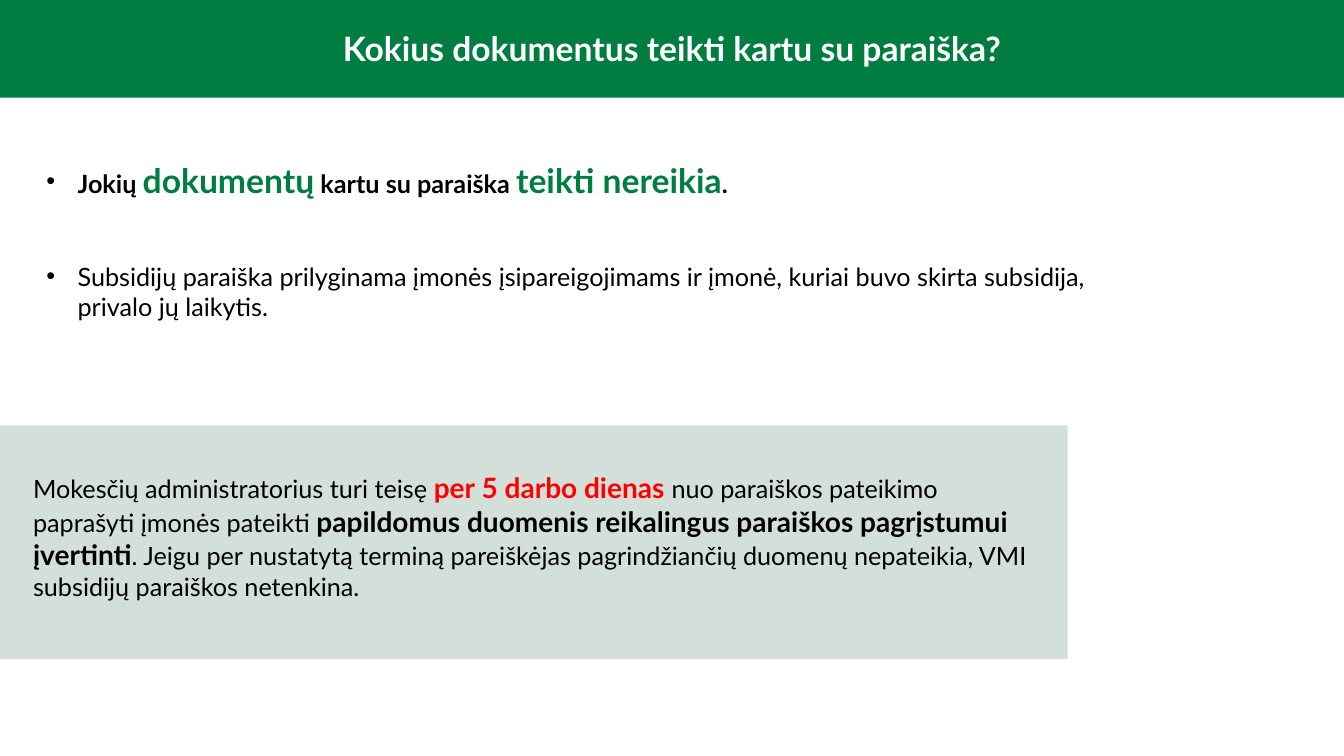
from dataclasses import dataclass

from pptx import Presentation
from pptx.dml.color import RGBColor as RGB
from pptx.enum.shapes import MSO_SHAPE as Shape
from pptx.enum.text import MSO_ANCHOR as Anchor, MSO_AUTO_SIZE as Fit, PP_ALIGN as Align
from pptx.util import Inches, Pt


@dataclass(frozen=True)
class Theme:
    font: str = "Lato"
    band: RGB = RGB(0x01, 0x7D, 0x41)
    panel: RGB = RGB(0xD3, 0xE0, 0xD9)
    green: RGB = RGB(0x00, 0x7D, 0x40)
    red: RGB = RGB(0xFF, 0x00, 0x00)
    black: RGB = RGB(0x00, 0x00, 0x00)
    white: RGB = RGB(0xFF, 0xFF, 0xFF)
    text: int = 18
    strong: int = 20
    large: int = 24


THEME = Theme()


@dataclass(frozen=True)
class Box:
    left: float
    top: float
    width: float
    height: float

    def size(self) -> tuple:
        return tuple(Inches(n) for n in (self.left, self.top, self.width, self.height))


@dataclass(frozen=True)
class Span:
    text: str
    size: int = THEME.text
    color: RGB = THEME.black
    bold: bool = False


def add_rect(slide, box: Box, color: RGB):
    rect = slide.shapes.add_shape(Shape.RECTANGLE, *box.size())
    rect.shadow.inherit = False
    rect.fill.solid()
    rect.fill.fore_color.rgb = color
    rect.line.fill.background()
    return rect


def place(shape, box: Box, anchor: Anchor = Anchor.TOP):
    shape.left, shape.top, shape.width, shape.height = box.size()
    frame = shape.text_frame
    frame.word_wrap = True
    frame.auto_size = Fit.NONE
    frame.vertical_anchor = anchor
    return frame


def write(para, spans: list[Span], align: Align = Align.LEFT, gap: float = 0) -> None:
    para.alignment = align
    para.space_before = Pt(gap)
    para.font.name = THEME.font
    for span in spans:
        run = para.add_run()
        run.text = span.text
        run.font.size = Pt(span.size)
        run.font.bold = span.bold
        run.font.color.rgb = span.color


def indent(para, depth: float) -> None:
    props = para._p.get_or_add_pPr()
    props.set("marL", str(Inches(depth)))
    props.set("indent", str(-Inches(depth)))


TITLE = Span("Kokius dokumentus teikti kartu su paraiška?", THEME.large, THEME.white, True)
POINTS = [
    [
        Span("Jokių ", bold=True),
        Span("dokumentų", THEME.large, THEME.green, True),
        Span(" kartu su paraiška ", bold=True),
        Span("teikti nereikia", THEME.large, THEME.green, True),
        Span(".", bold=True),
    ],
    [Span("Subsidijų paraiška prilyginama įmonės įsipareigojimams ir įmonė, "
          "kuriai buvo skirta subsidija, privalo jų laikytis.")],
]
NOTE = [
    Span("Mokesčių administratorius turi teisę "),
    Span("per", THEME.strong, THEME.red, True),
    Span(" "),
    Span("5 darbo dienas ", THEME.strong, THEME.red, True),
    Span("nuo paraiškos pateikimo paprašyti įmonės pateikti "),
    Span("papildomus duomenis reikalingus paraiškos pagrįstumui įvertinti",
         THEME.strong, bold=True),
    Span(". Jeigu per nustatytą terminą pareiškėjas pagrindžiančių duomenų "
         "nepateikia, VMI subsidijų paraiškos netenkina."),
]


def main() -> None:
    deck = Presentation()
    deck.slide_width, deck.slide_height = Inches(13.33), Inches(7.5)
    slide = deck.slides.add_slide(deck.slide_layouts[1])
    title, body = slide.placeholders

    # Green band behind the title
    band = add_rect(slide, Box(0, 0, 13.33, 0.97), THEME.band)
    title.element.addprevious(band.element)
    frame = place(title, Box(0, 0.23, 13.33, 0.5), Anchor.MIDDLE)
    write(frame.paragraphs[0], [TITLE], Align.CENTER)

    # Bullet list
    frame = place(body, Box(0.36, 1.54, 10.96, 1.72))
    for i, spans in enumerate(POINTS):
        para = frame.add_paragraph() if i else frame.paragraphs[0]
        write(para, spans, gap=43 if i else 0)
        indent(para, 0.31)

    # Note on its pale panel
    add_rect(slide, Box(0, 4.22, 10.59, 2.32), THEME.panel)
    box = Box(0.23, 4.62, 10.13, 1.41)
    frame = place(slide.shapes.add_textbox(*box.size()), box)
    write(frame.paragraphs[0], NOTE)

    deck.save("out.pptx")


if __name__ == "__main__":
    main()
